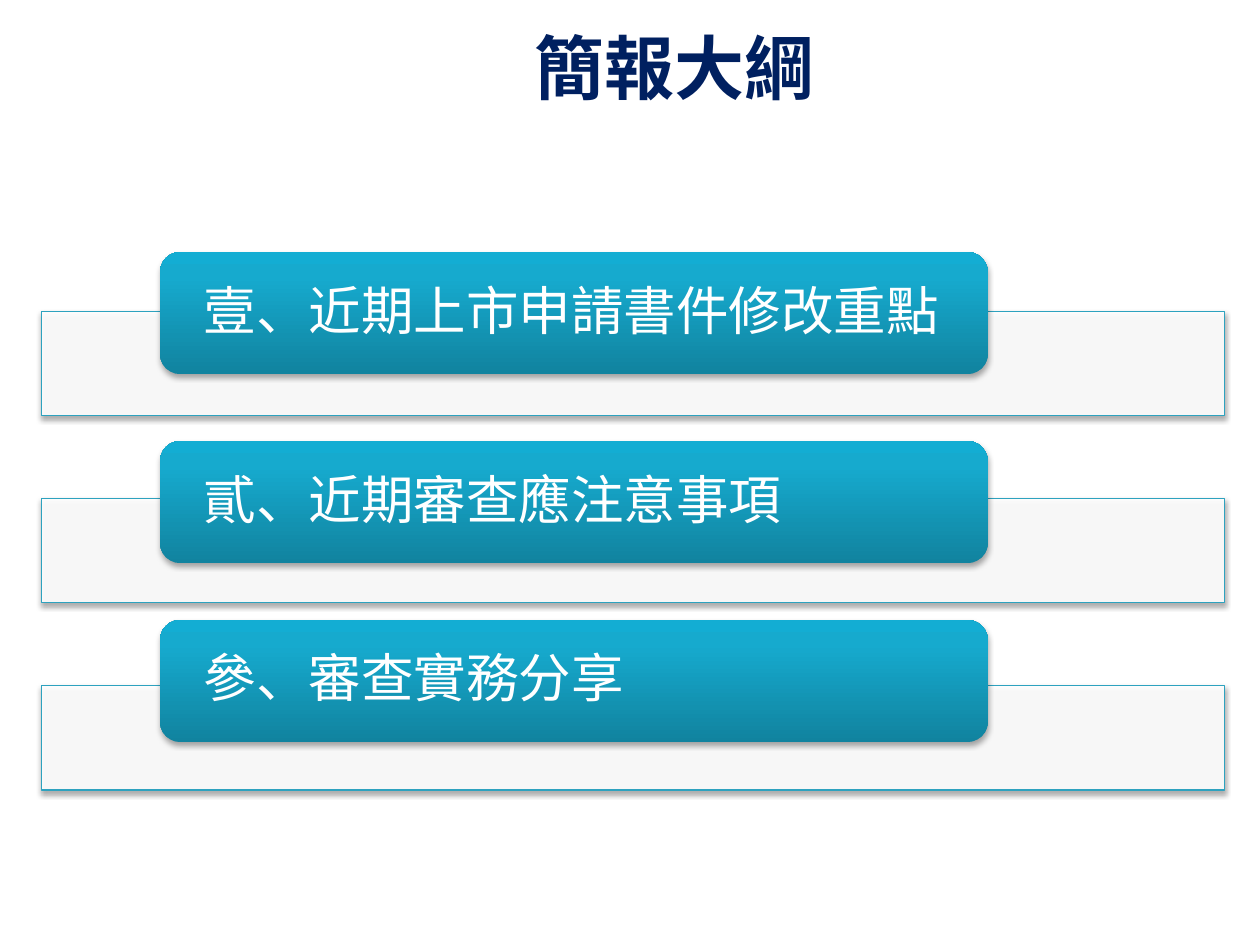
from copy import deepcopy

from lxml import etree
from pptx import Presentation
from pptx.dml.color import RGBColor
from pptx.enum.shapes import MSO_SHAPE
from pptx.enum.text import MSO_ANCHOR, PP_ALIGN
from pptx.oxml.ns import qn
from pptx.util import Pt

RECT = MSO_SHAPE.RECTANGLE
ROUND_RECT = MSO_SHAPE.ROUNDED_RECTANGLE
MIDDLE = MSO_ANCHOR.MIDDLE
CENTER, LEFT = PP_ALIGN.CENTER, PP_ALIGN.LEFT

NAVY = RGBColor(0x00, 0x20, 0x60)
WHITE = RGBColor(0xFF, 0xFF, 0xFF)
TEAL = RGBColor(0x2D, 0xA2, 0xBF)
GRADIENT = [
    (0, RGBColor(0x11, 0x83, 0x9F)),
    (0.8, RGBColor(0x16, 0xAA, 0xCE)),
    (1, RGBColor(0x13, 0xAD, 0xD3)),
]

BAR_TOP, BAR_PITCH = 177.84, 106.92
TOPICS = [
    ("壹、近期上市申請書件修改重點", 144),
    ("貳、近期審查應注意事項", 252),
    ("參、審查實務分享", 354.24),
]


class Deck:
    title_font = "TeX Gyre Pagella"
    body_font = "Calibri"

    def __init__(self, prs):
        self.s = prs.slides.add_slide(prs.slide_layouts[5])

    def text(self, tf, text, size, font, color, bold, align):
        tf.word_wrap = True
        tf.vertical_anchor = MIDDLE
        p = tf.paragraphs[0]
        p.alignment = align
        r = p.add_run()
        r.text = text
        r.font.size = Pt(size)
        r.font.name = font
        r.font.color.rgb = color
        r.font.bold = bold
        return p

    def title(self, text, x, y, w, h):
        sp = self.s.shapes.title
        sp.left, sp.top, sp.width, sp.height = Pt(x), Pt(y), Pt(w), Pt(h)
        self.text(sp.text_frame, text, 40, self.title_font, NAVY, True, CENTER)

    def shape(self, kind, x, y, w, h):
        sp = self.s.shapes.add_shape(kind, Pt(x), Pt(y), Pt(w), Pt(h))
        sp.shadow.inherit = False
        effects = sp.element.spPr.find(qn("a:effectLst"))
        shadow = etree.SubElement(
            effects, qn("a:outerShdw"), blurRad=str(Pt(3.1)),
            dist=str(Pt(1.8)), dir="5400000", rotWithShape="0")
        color = etree.SubElement(shadow, qn("a:srgbClr"), val="000000")
        etree.SubElement(color, qn("a:alpha"), val="35000")
        return sp

    def bar(self, x, y, w, h):
        sp = self.shape(RECT, x, y, w, h)
        sp.fill.solid()
        sp.fill.fore_color.rgb = WHITE
        color = sp.element.spPr.find(qn("a:solidFill"))[0]
        etree.SubElement(color, qn("a:alpha"), val="90000")
        sp.line.color.rgb = TEAL
        sp.line.width = Pt(0.75)

    def tab(self, text, x, y, w, h):
        sp = self.shape(ROUND_RECT, x, y, w, h)
        sp.line.fill.background()
        sp.fill.gradient()
        sp.fill.gradient_angle = 90
        stops = sp.element.spPr.find(qn("a:gradFill")).find(qn("a:gsLst"))
        stops.append(deepcopy(stops[0]))
        for stop, (position, color) in zip(sp.fill.gradient_stops, GRADIENT):
            stop.position = position
            stop.color.rgb = color
        tf = sp.text_frame
        tf.margin_left = tf.margin_right = Pt(21.6)
        tf.margin_top = tf.margin_bottom = 0
        p = self.text(tf, text, 30, self.body_font, WHITE, False, LEFT)
        p.line_spacing = 0.9


def main():
    prs = Presentation()
    prs.slide_width, prs.slide_height = Pt(720), Pt(540)
    deck = Deck(prs)
    deck.title("簡報大綱", 71.28, 15.12, 628.56, 45.36)
    for i, (text, tab_top) in enumerate(TOPICS):
        deck.bar(23.76, BAR_TOP + i * BAR_PITCH, 676.08, 59.76)
        deck.tab(text, 91.44, tab_top, 473.04, 69.84)
    prs.save("out.pptx")


if __name__ == "__main__":
    main()
